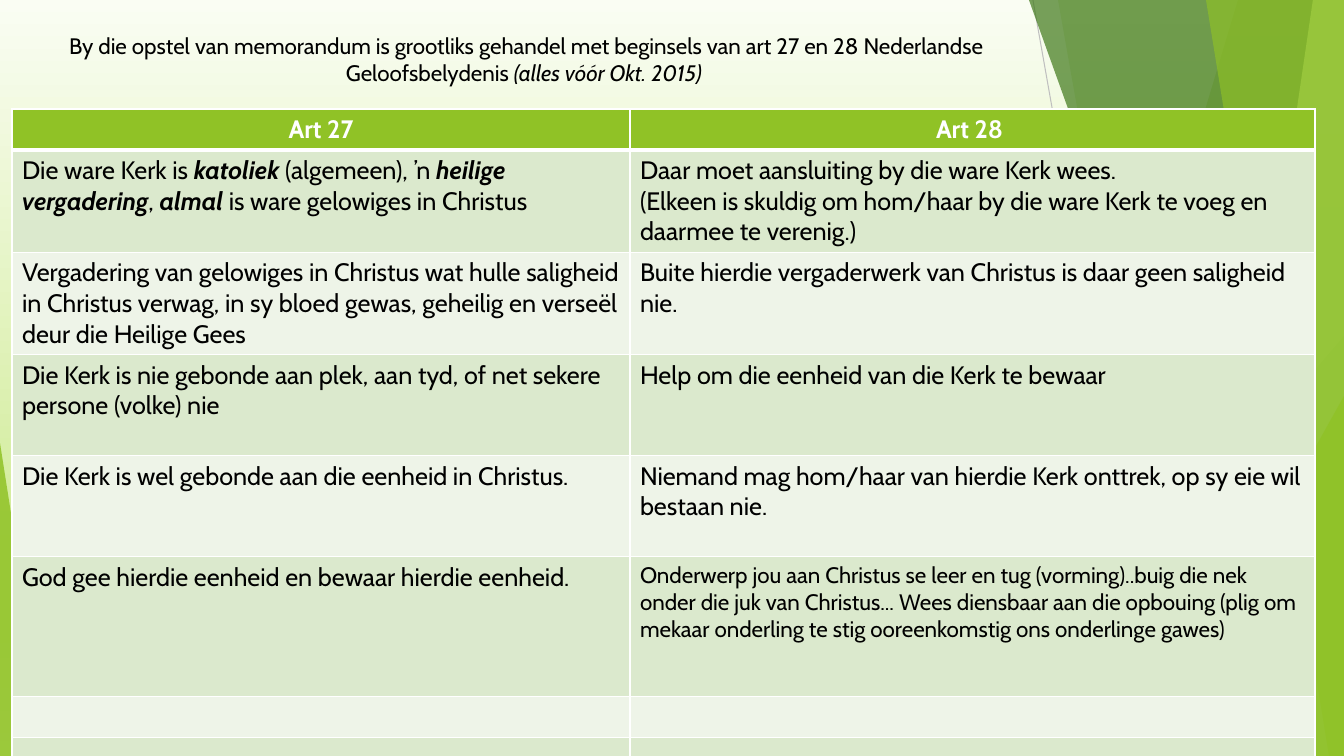
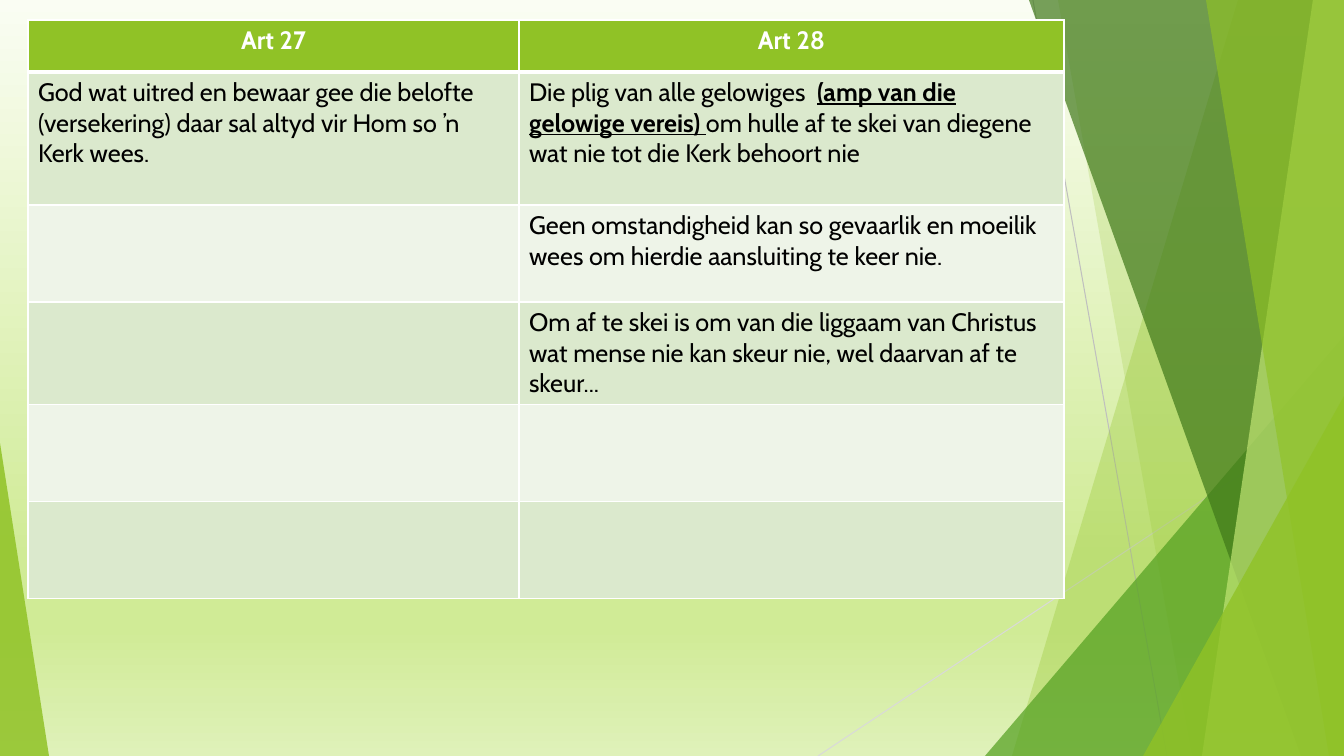
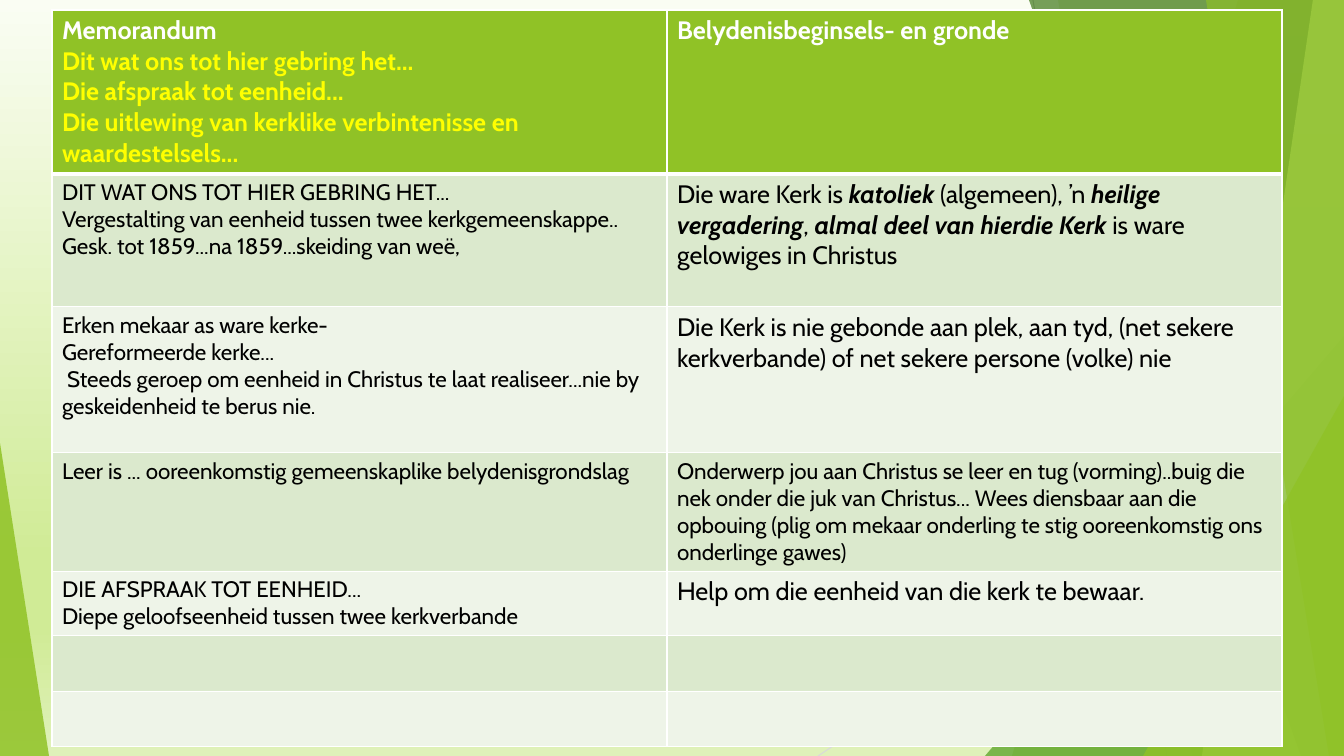
"""Builds three slides that set articles 27 and 28 beside the memorandum."""
import collections
import dataclasses

import lxml.etree
import pptx
import pptx.dml.color
import pptx.enum.shapes
import pptx.enum.text
import pptx.oxml.ns
import pptx.util

Para = collections.namedtuple("Para", "runs size ink", defaults=("body", "ink"))

TITLE = [
    ("By die opstel van memorandum is grootliks gehandel met beginsels van "
     "art 27 en 28 Nederlandse Geloofsbelydenis ", ""),
    ("(alles vóór Okt. 2015) ", "i"),
]
TITLE_BOX = (35, 27, 983, 65)

SUBMIT = Para(
    "Onderwerp jou aan Christus se leer en tug (vorming)..buig die nek onder die juk "
    "van Christus... Wees diensbaar aan die opbouing (plig om mekaar onderling te stig "
    "ooreenkomstig ons onderlinge gawes)", "small")


def true_church(members):
    """Return the paragraph on the true church with its members named."""
    return Para([
        ("Die ware Kerk is", ""), (" katoliek ", "bi"), ("(algemeen), ’n ", ""),
        ("heilige vergadering", "bi"), (", ", ""), (members, "bi"),
        (" is ware gelowiges in Christus", ""),
    ])


EMPTY_ROW = ([], [])

SLIDES = [
    {
        "title": TITLE,
        "at": (12, 109),
        "columns": (618, 685),
        "rows": (41, 101, 101, 101, 101, 140, 41, 41),
        "header_align": "CENTER",
        "cells": [
            ([Para("Art 27", ink="paper")], [Para("Art 28 ", ink="paper")]),
            ([true_church("almal")],
             [Para("Daar moet aansluiting by die ware Kerk wees."),
              Para("(Elkeen is skuldig om hom/haar by die ware Kerk te voeg en "
                   "daarmee te verenig.)")]),
            ([Para("Vergadering van gelowiges in Christus wat hulle saligheid in Christus "
                   "verwag, in sy bloed gewas, geheilig en verseël deur die Heilige Gees")],
             [Para("Buite hierdie vergaderwerk van Christus is daar geen saligheid nie.")]),
            ([Para("Die Kerk is nie gebonde aan plek, aan tyd, of net sekere persone "
                   "(volke) nie")],
             [Para("Help om die eenheid van die Kerk te bewaar")]),
            ([Para("Die Kerk is wel gebonde aan die eenheid in Christus.")],
             [Para("Niemand mag hom/haar van hierdie Kerk onttrek, op sy eie wil "
                   "bestaan nie.")]),
            ([Para("God gee hierdie eenheid en bewaar hierdie eenheid.")], [SUBMIT]),
            EMPTY_ROW,
            EMPTY_ROW,
        ],
    },
    {
        "at": (28, 20),
        "columns": (491, 545),
        "rows": (52, 133, 97, 102, 97, 97),
        "header_align": "CENTER",
        "cells": [
            ([Para("Art 27", ink="paper")], [Para("Art 28", ink="paper")]),
            ([Para("God wat uitred en bewaar gee die belofte (versekering) daar sal altyd "
                   "vir Hom so ’n Kerk wees.")],
             [Para([("Die plig van alle gelowiges  ", ""),
                    ("(amp van die gelowige vereis) ", "bu"),
                    ("om hulle af te skei van diegene wat nie tot die Kerk behoort nie", "")])]),
            ([], [Para("Geen omstandigheid kan so gevaarlik en moeilik wees om hierdie "
                       "aansluiting te keer nie.")]),
            ([], [Para("Om af te skei is om van die liggaam van Christus wat mense nie kan "
                       "skeur nie, wel daarvan af te skeur...")]),
            EMPTY_ROW,
            EMPTY_ROW,
        ],
    },
    {
        "at": (52, 10),
        "columns": (615, 615),
        "rows": (163, 133, 146, 118, 64, 56, 55),
        "header_align": "LEFT",
        "cells": [
            ([Para("Memorandum", ink="paper"),
              Para("Dit wat ons tot hier gebring het...", ink="accent"),
              Para("Die afspraak tot eenheid...", ink="accent"),
              Para("Die uitlewing van kerklike verbintenisse en waardestelsels...",
                   ink="accent")],
             [Para("Belydenisbeginsels- en gronde", ink="paper")]),
            ([Para("DIT WAT ONS TOT HIER GEBRING HET...", "small"),
              Para("Vergestalting van eenheid tussen twee kerkgemeenskappe.. Gesk. tot "
                   "1859...na 1859...skeiding van weë,", "small")],
             [true_church("almal deel van hierdie Kerk")]),
            ([Para("Erken mekaar as ware kerke-", "small"),
              Para("Gereformeerde kerke...", "small"),
              Para(" Steeds geroep om eenheid in Christus te laat realiseer...nie by "
                   "geskeidenheid te berus nie.", "small")],
             [Para("Die Kerk is nie gebonde aan plek, aan tyd, (net sekere kerkverbande) of "
                   "net sekere persone (volke) nie")]),
            ([Para("Leer is ... ooreenkomstig gemeenskaplike belydenisgrondslag", "small")],
             [SUBMIT]),
            ([Para("DIE AFSPRAAK TOT EENHEID...", "small"),
              Para("Diepe geloofseenheid tussen twee kerkverbande", "small")],
             [Para("Help om die eenheid van die kerk te bewaar.")]),
            EMPTY_ROW,
            EMPTY_ROW,
        ],
    },
]

WIDTH, HEIGHT = 1344, 756
PX = 914400 / 100.8

RAYS = [((1033, 0), (1167, HEIGHT), "BFBFBF"), ((WIDTH, 406), (818, HEIGHT), "D9D9D9")]
FACETS = [
    ("band", (1238, 1012), "90C226", 30),
    ("band", (1058, 1192), "90C226", 20),
    ("triangle", (985, 336, 359, 420, 1), "54A021", 72),
    ("band", (1029, 1301), "3F7819", 70),
    ("band", (1313, 1202), "C0E474", 70),
    ("band", (1206, 1329), "90C226", 65),
    ("triangle", (1143, 396, 201, 360, 1), "90C226", 80),
    ("triangle", (0, 443, 49, 313, 0), "90C226", 85),
]


@dataclasses.dataclass(frozen=True)
class Theme:
    """Holds the colours, the font and the type sizes."""
    font: str = "Cabin"
    body: int = 18
    small: int = 16
    ink: str = "000000"
    paper: str = "FFFFFF"
    accent: str = "FFFF00"
    header: str = "90C226"
    stripes: tuple = ("EEF4E8", "DBE9CD")
    backdrop: tuple = ((0, "FAFDF3"), (74, "D0EB96"), (83, "D0EB96"), (100, "DFF1B9"))
    hairline: float = 0.75
    grid: int = 1
    header_rule: int = 3


THEME = Theme()
qn = pptx.oxml.ns.qn


def px(length):
    """Turn pixels into EMU."""
    return pptx.util.Emu(round(length * PX))


def rgb(colour):
    """Turn a hex string into a colour."""
    return pptx.dml.color.RGBColor.from_string(colour)


def add_child(parent, tag, **attributes):
    """Append one XML element."""
    return lxml.etree.SubElement(parent, qn(tag), attributes)


def write_para(para, content, bold=False):
    """Fill a paragraph with its runs and set its font."""
    font = para.font
    font.name = THEME.font
    font.size = pptx.util.Pt(getattr(THEME, content.size))
    font.color.rgb = rgb(getattr(THEME, content.ink))
    font.bold = bold
    runs = [(content.runs, "")] if isinstance(content.runs, str) else content.runs
    for text, style in runs:
        span = para.add_run()
        span.text = text
        if "b" in style:
            span.font.bold = True
        if "i" in style:
            span.font.italic = True
        if "u" in style:
            span.font.underline = True


def paint_backdrop(master):
    """Give the master its gradient."""
    fill = master.background.fill
    fill.gradient()
    fill.gradient_angle = 270
    stops = next(master.element.iter(qn("a:gsLst")))
    stops.clear()
    for position, colour in THEME.backdrop:
        stop = add_child(stops, "a:gs", pos=str(position * 1000))
        add_child(stop, "a:srgbClr", val=colour)


def draw_ray(page, start, end, colour):
    """Draw one thin line."""
    ray = page.shapes.add_connector(
        pptx.enum.shapes.MSO_CONNECTOR.STRAIGHT, *map(px, start + end))
    ray.line.color.rgb = rgb(colour)
    ray.line.width = pptx.util.Pt(THEME.hairline)
    add_child(ray.element.spPr, "a:effectLst")
    return ray


def draw_facet(page, kind, place, colour, opacity):
    """Draw one see-through band or triangle."""
    if kind == "band":
        top, bottom = place
        outline = page.shapes.build_freeform(top, 0, scale=PX)
        outline.add_line_segments([(WIDTH, 0), (WIDTH, HEIGHT), (bottom, HEIGHT)])
        facet = outline.convert_to_shape()
    else:
        *box, apex = place
        facet = page.shapes.add_shape(
            pptx.enum.shapes.MSO_SHAPE.ISOSCELES_TRIANGLE, *map(px, box))
        facet.adjustments[0] = apex
    facet.shadow.inherit = False
    facet.line.fill.background()
    facet.fill.solid()
    facet.fill.fore_color.rgb = rgb(colour)
    tint = next(facet.element.spPr.iter(qn("a:srgbClr")))
    add_child(tint, "a:alpha", val=str(opacity * 1000))
    return facet


def dress_master(master, page):
    """Draw the shared decoration and move it to the master."""
    paint_backdrop(master)
    decoration = [draw_ray(page, *ray) for ray in RAYS]
    decoration += [draw_facet(page, *facet) for facet in FACETS]
    tree = master.shapes.element
    for order, shape in enumerate(decoration):
        next(shape.element.iter(qn("p:cNvPr"))).set("id", str(100 + order))
        tree.insert(2 + order, shape.element)


def write_title(page, runs):
    """Place and fill the title."""
    title = page.shapes.title
    title.left, title.top, title.width, title.height = map(px, TITLE_BOX)
    frame = title.text_frame
    frame.word_wrap = True
    frame.auto_size = pptx.enum.text.MSO_AUTO_SIZE.NONE
    frame.vertical_anchor = pptx.enum.text.MSO_ANCHOR.TOP
    para = frame.paragraphs[0]
    para.alignment = pptx.enum.text.PP_ALIGN.CENTER
    write_para(para, Para(runs, "small"))


def style_cell(cell, colour, bottom):
    """Set the borders and the fill of a cell."""
    properties = cell._tc.get_or_add_tcPr()
    for side in "LRTB":
        points = bottom if side == "B" else THEME.grid
        border = add_child(properties, "a:ln" + side, w=str(pptx.util.Pt(points)))
        add_child(add_child(border, "a:solidFill"), "a:srgbClr", val=THEME.paper)
    cell.fill.solid()
    cell.fill.fore_color.rgb = rgb(colour)


def draw_table(page, content):
    """Draw the comparison table."""
    columns, rows = content["columns"], content["rows"]
    table = page.shapes.add_table(
        len(rows), len(columns), *map(px, content["at"] + (sum(columns), sum(rows)))).table
    for column, width in zip(table.columns, columns):
        column.width = px(width)
    for row, height in zip(table.rows, rows):
        row.height = px(height)
    for index, row in enumerate(content["cells"]):
        header = index == 0
        align = content["header_align"] if header else "LEFT"
        for cell, paras in zip(table.rows[index].cells, row):
            style_cell(cell, THEME.header if header else THEME.stripes[index % 2],
                       THEME.header_rule if header else THEME.grid)
            frame = cell.text_frame
            for order, item in enumerate(paras):
                para = frame.add_paragraph() if order else frame.paragraphs[0]
                para.alignment = pptx.enum.text.PP_ALIGN[align]
                write_para(para, item, bold=header)


def main():
    """Build and save the deck."""
    deck = pptx.Presentation()
    deck.slide_width, deck.slide_height = px(WIDTH), px(HEIGHT)
    title_only, blank = deck.slide_layouts[5], deck.slide_layouts[6]
    for content in SLIDES:
        page = deck.slides.add_slide(title_only if "title" in content else blank)
        if "title" in content:
            write_title(page, content["title"])
        draw_table(page, content)
    dress_master(deck.slide_master, deck.slides[0])
    deck.save("out.pptx")


if __name__ == "__main__":
    main()
